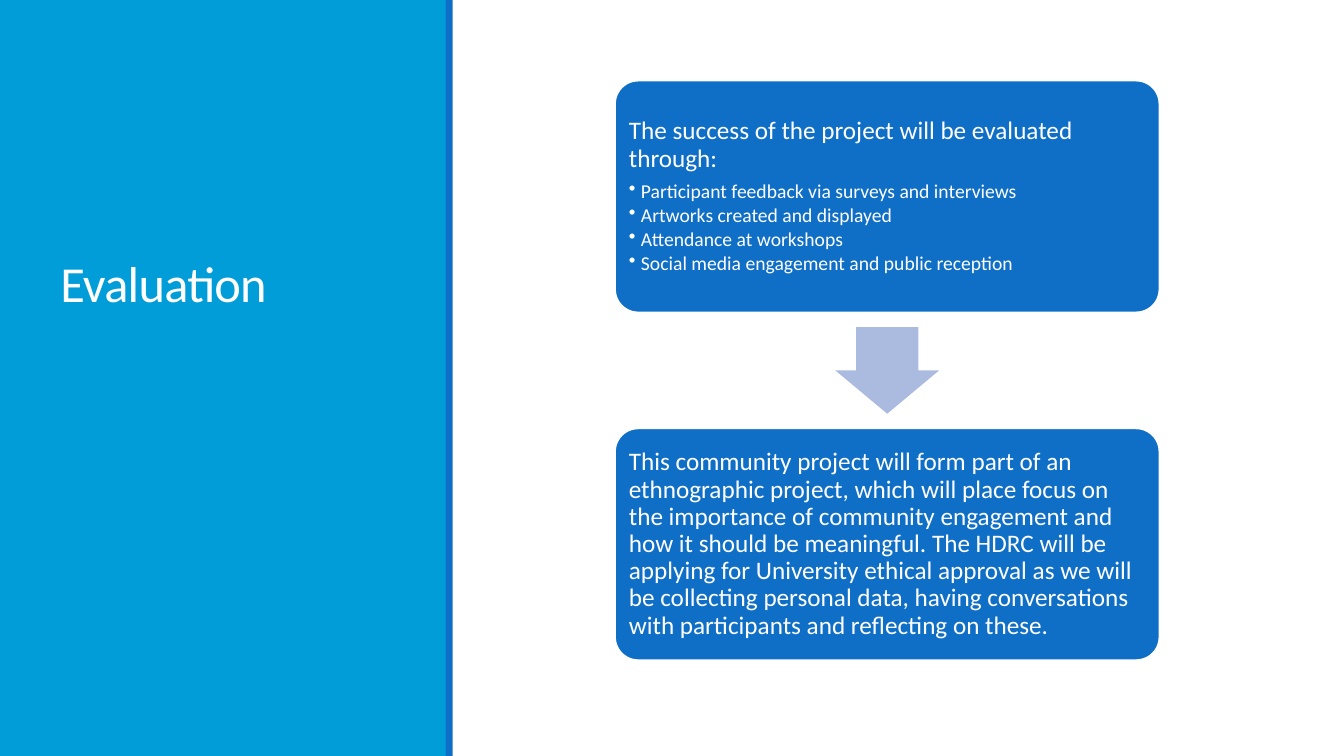
from pptx import Presentation
from pptx.dml.color import RGBColor
from pptx.enum.shapes import MSO_SHAPE as Preset
from pptx.enum.text import MSO_ANCHOR as Anchor, PP_ALIGN as Align
from pptx.oxml.ns import qn
from pptx.util import Inches, Pt
from lxml.etree import SubElement

COLOURS = {"panel": "009DD9", "accent": "0F6FC6", "arrow": "ABBBDF", "white": "FFFFFF"}
FONT = "Calibri"
TITLE = "Evaluation"
STEPS = [
    {
        "lead": "The success of the project will be evaluated through:",
        "bullets": [
            "Participant feedback via surveys and interviews",
            "Artworks created and displayed",
            "Attendance at workshops",
            "Social media engagement and public reception",
        ],
    },
    {
        "lead": "This community project will form part of an ethnographic project, "
        "which will place focus on the importance of community engagement and how "
        "it should be meaningful. The HDRC will be applying for University ethical "
        "approval as we will be collecting personal data, having conversations with "
        "participants and reflecting on these.",
        "bullets": [],
    },
]
STEP_LEFT, STEP_TOP, STEP_WIDTH, STEP_HEIGHT, STEP_GAP = 6.1, 0.8, 5.4, 2.3, 1.15
ARROW_WIDTH, ARROW_HEIGHT = 1.03, 0.86
INSET = 0.07


def add_block(preset, left, top, width, height, fill, line=None, adjust=()):
    block = slide.shapes.add_shape(
        preset, Inches(left), Inches(top), Inches(width), Inches(height))
    block.shadow.inherit = False
    block.fill.solid()
    block.fill.fore_color.rgb = RGBColor.from_string(COLOURS[fill])
    if line:
        block.line.color.rgb = RGBColor.from_string(COLOURS[line])
        block.line.width = Pt(1.25)
    else:
        block.line.fill.background()
    for index, value in enumerate(adjust):
        block.adjustments[index] = value
    return block


def write(frame, text, size=18, line_spacing=0.9, after=0, bullet=False, tracking=0):
    paragraph = frame.paragraphs[0]
    if paragraph.runs:
        paragraph = frame.add_paragraph()
    paragraph.alignment = Align.LEFT
    paragraph.line_spacing = line_spacing
    paragraph.space_after = Pt(after)
    if bullet:
        paragraph.level = 1
        properties = paragraph._p.get_or_add_pPr()
        properties.set("marL", str(Inches(0.12)))
        properties.set("indent", str(Inches(-0.12)))
        SubElement(properties, qn("a:buChar")).set("char", "•")
    run = paragraph.add_run()
    run.text = text
    run.font.name = FONT
    run.font.size = Pt(size)
    run.font.color.rgb = RGBColor.from_string(COLOURS["white"])
    if tracking:
        run._r.get_or_add_rPr().set("spc", str(int(tracking * 100)))


deck = Presentation()
deck.slide_width, deck.slide_height = Inches(13.33), Inches(7.5)
slide = deck.slides.add_slide(deck.slide_layouts[6])

add_block(Preset.RECTANGLE, 0, 0, 4.43, 7.5, "panel")
add_block(Preset.RECTANGLE, 4.42, 0, 0.07, 7.5, "accent")

title = slide.shapes.add_textbox(Inches(0.5), Inches(0.65), Inches(3.5), Inches(2.5)).text_frame
title.word_wrap = True
title.vertical_anchor = Anchor.BOTTOM
write(title, TITLE, size=36, line_spacing=0.85, tracking=-0.5)

for index, step in enumerate(STEPS):
    top = STEP_TOP + index * (STEP_HEIGHT + STEP_GAP)
    if index:
        add_block(
            Preset.DOWN_ARROW,
            STEP_LEFT + (STEP_WIDTH - ARROW_WIDTH) / 2,
            top - (STEP_GAP + ARROW_HEIGHT) / 2,
            ARROW_WIDTH, ARROW_HEIGHT, "arrow", adjust=(0.6, 0.5))
    card = add_block(Preset.ROUNDED_RECTANGLE, STEP_LEFT, top, STEP_WIDTH, STEP_HEIGHT,
                     "accent", line="white", adjust=(0.1,))
    frame = card.text_frame
    frame.word_wrap = True
    frame.vertical_anchor = Anchor.MIDDLE
    frame.margin_left = frame.margin_right = Inches(INSET)
    frame.margin_top = frame.margin_bottom = Inches(INSET)
    write(frame, step["lead"], after=6.3)
    for bullet in step["bullets"]:
        write(frame, bullet, size=14, after=2.1, bullet=True)

deck.save("out.pptx")
